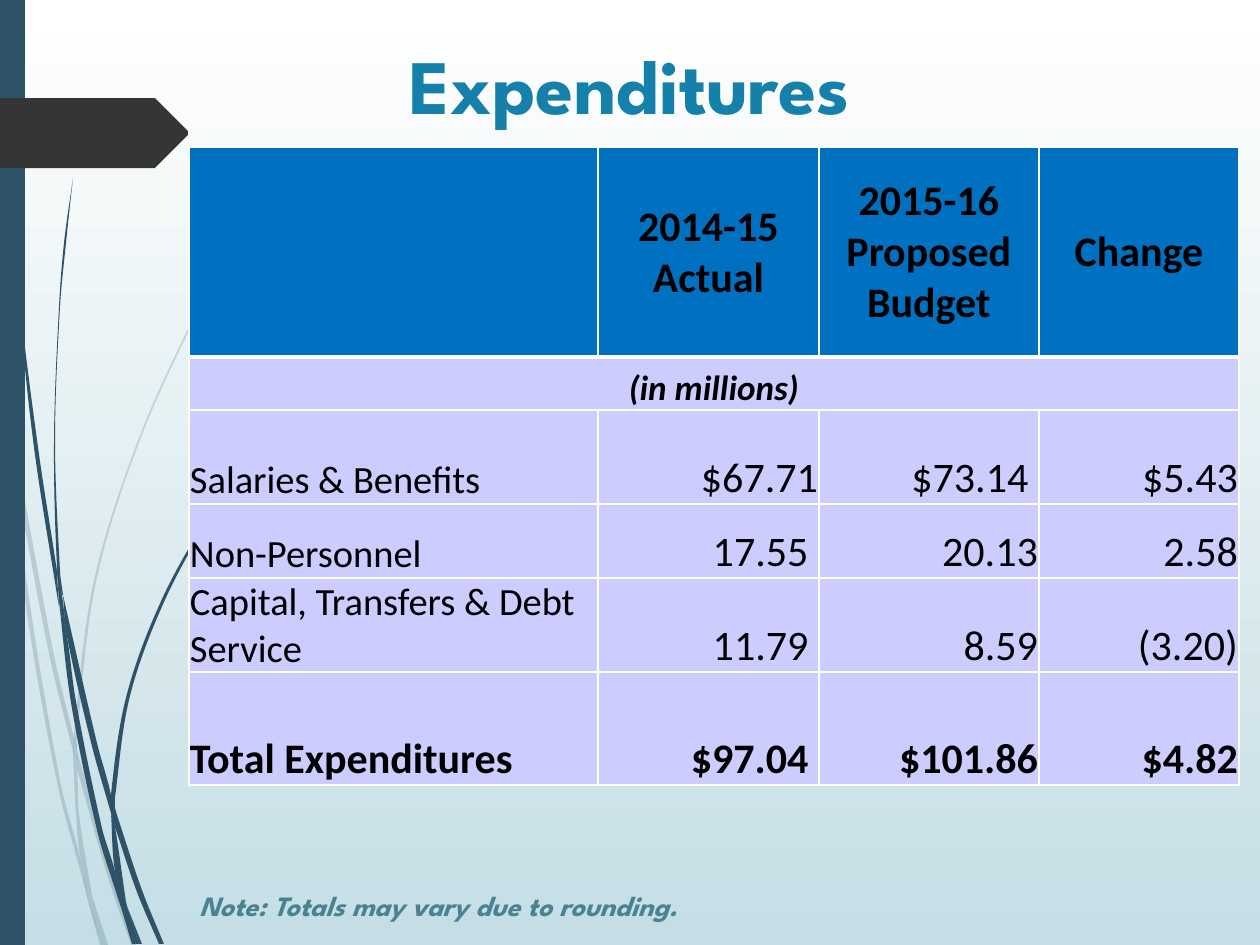
from math import dist

from lxml.etree import SubElement
from pptx import Presentation
from pptx.dml.color import RGBColor
from pptx.enum.shapes import MSO_SHAPE
from pptx.enum.text import MSO_ANCHOR as ANCHOR, PP_ALIGN as ALIGN
from pptx.oxml.ns import qn
from pptx.util import Emu, Pt

PX_PER_INCH = 126
SPARTAN, CALIBRI = "League Spartan", "Calibri"

WHITE = RGBColor(0xFF, 0xFF, 0xFF)
BLACK = RGBColor(0x00, 0x00, 0x00)
MIST = RGBColor(0xC5, 0xDE, 0xE5)
SLATE = RGBColor(0x2E, 0x53, 0x69)
CHARCOAL = RGBColor(0x35, 0x35, 0x35)
TITLE_BLUE = RGBColor(0x15, 0x81, 0xAA)
HEADER_BLUE = RGBColor(0x00, 0x70, 0xC0)
LILAC = RGBColor(0xCC, 0xCC, 0xFF)
NOTE_TEAL = RGBColor(0x49, 0x83, 0x92)

# Grass blades: the two edges of each outline, in px
PALE_BLADES = [
    ([(0, 355), (8, 406), (10, 441)], [(9, 433), (0, 377)]),
    ([(13, 435), (54, 655), (74, 738)], [(74, 755), (50, 658), (15, 474)]),
    ([(77, 751), (81, 765), (111, 872), (136, 945)],
     [(131, 945), (107, 874), (77, 769)]),
    ([(92, 896), (108, 945)], [(105, 945)]),
    ([(10, 441), (15, 474), (28, 591), (60, 780), (81, 861), (88, 900)],
     [(88, 900), (81, 873), (57, 782), (24, 592), (10, 441)]),
    ([(73, 755), (76, 814), (81, 861), (92, 896)],
     [(92, 896), (79, 814), (77, 769), (73, 755)]),
    ([(77, 751), (77, 736), (96, 582), (140, 440), (200, 309), (236, 249),
      (253, 221), (273, 194)],
     [(273, 193), (253, 220), (234, 248), (199, 307), (139, 438), (94, 581),
      (74, 736), (77, 751)]),
    ([(88, 900), (103, 945)], [(100, 945)]),
    ([(74, 738), (77, 751), (77, 769)], [(77, 766), (73, 755)]),
    ([(82, 861), (84, 872), (92, 896), (105, 945)],
     [(103, 945), (88, 900), (82, 861)]),
]
DARK_BLADES = [
    ([(3, 0), (4, 60), (6, 139), (18, 294), (34, 447), (58, 601), (59, 606)],
     [(57, 576), (57, 571), (38, 447), (19, 292), (8, 137), (5, 60), (4, 0)]),
    ([(63, 595), (97, 743), (111, 795), (111, 813)],
     [(111, 813), (92, 746), (67, 636), (63, 595)]),
    ([(115, 808), (118, 818), (142, 890), (164, 944)],
     [(159, 944), (137, 892), (115, 827)]),
    ([(59, 601), (67, 636), (76, 701), (102, 828), (115, 871), (122, 910)],
     [(122, 910), (116, 892), (97, 830), (71, 702), (59, 601)]),
    ([(63, 595), (60, 571), (55, 440), (60, 307), (66, 243), (73, 178)],
     [(73, 178), (64, 243), (59, 307), (54, 440), (57, 566), (62, 595)]),
    ([(127, 906), (142, 944)], [(139, 944)]),
    ([(57, 566), (62, 595), (67, 636)], [(59, 601), (57, 571)]),
    ([(115, 808), (115, 798), (130, 696), (165, 600), (213, 512), (241, 471),
      (256, 452), (272, 433)],
     [(271, 433), (256, 451), (241, 470), (212, 510), (163, 597), (127, 694),
      (111, 795), (115, 808)]),
    ([(122, 910), (136, 944)], [(132, 944)]),
    ([(111, 813), (115, 827), (126, 902), (127, 906)],
     [(127, 906), (115, 871), (111, 813)]),
    ([(111, 795), (115, 808), (115, 827)], [(113, 820), (111, 813)]),
    ([(115, 871), (127, 906), (139, 944)], [(136, 944), (122, 910), (115, 871)]),
]
TAB = [(0, 98), (155, 98), (157, 100), (188, 131), (188, 135), (157, 166),
       (155, 168), (0, 168)]

COLUMNS = [409, 221, 220, 200]
ROWS = [210, 53, 94, 74, 94, 113]
HEADER = ["", "2014-15 Actual", "2015-16 Proposed Budget", "Change"]
UNIT = "(in millions)"
BODY = [
    ["Salaries & Benefits", "$67.71", "$73.14 ", "$5.43"],
    ["Non-Personnel", "17.55 ", "20.13", "2.58"],
    ["Capital, Transfers & Debt Service", "11.79 ", "8.59", "(3.20)"],
    ["Total Expenditures", "$97.04 ", "$101.86", "$4.82"],
]


def px(n):
    return Emu(round(n * 914400 / PX_PER_INCH))


def paint(sp, color):
    sp.shadow.inherit = False
    sp.fill.solid()
    sp.fill.fore_color.rgb = color
    sp.line.fill.background()


def add_outline(shapes, points, color):
    first, *rest = [(px(x), px(y)) for x, y in points]
    builder = shapes.build_freeform(*first, scale=1.0)
    builder.add_line_segments(rest, close=False)
    sp = builder.convert_to_shape()
    SubElement(next(sp._element.iter(qn("a:path"))), qn("a:close"))
    paint(sp, color)
    return sp


def curve_controls(edge):
    """Two Bezier handles for each span of a smooth edge."""
    ends = [edge[0], *edge, edge[-1]]
    for a, b, c, d in zip(ends, ends[1:], ends[2:], ends[3:]):
        span = dist(b, c) / 3
        out, back = span / (dist(a, b) + dist(b, c)), span / (dist(b, c) + dist(c, d))
        yield [(b[0] + (c[0] - a[0]) * out, b[1] + (c[1] - a[1]) * out),
               (c[0] - (d[0] - b[0]) * back, c[1] - (d[1] - b[1]) * back)]


def add_blade(shapes, left, right):
    pointed = left[-1] == right[0]
    points = left + right[pointed:]
    sp = add_outline(shapes, points, SLATE)
    cap = [] if pointed else [None]
    spans = [*curve_controls(left), *cap, *curve_controls(right)]
    x0, y0 = (min(axis) for axis in zip(*points))
    for line, controls in zip(list(sp._element.iter(qn("a:lnTo"))), spans):
        if controls:
            line.tag = qn("a:cubicBezTo")
            for i, (x, y) in enumerate(controls):
                pt = SubElement(line, qn("a:pt"), x=str(px(x - x0)), y=str(px(y - y0)))
                line.insert(i, pt)
    return sp


def add_blades(slide, blades, opacity=None):
    group = slide.shapes.add_group_shape()
    for left, right in blades:
        sp = add_blade(group.shapes, left, right)
        if opacity:
            clr = sp.fill._xPr.find(qn("a:solidFill"))[0]
            SubElement(clr, qn("a:alpha"), val=str(opacity * 1000))


def add_run(p, text, font, size, color, bold=False, italic=False):
    r = p.add_run()
    r.text = text
    f = r.font
    f.name, f.size, f.bold, f.italic = font, Pt(size), bold, italic
    f.color.rgb = color


def add_text(slide, box, text, align, *style, wrap=True, **emphasis):
    tf = slide.shapes.add_textbox(*map(px, box)).text_frame
    tf.word_wrap = wrap
    p = tf.paragraphs[0]
    p.alignment = align
    add_run(p, text, *style, **emphasis)


def set_borders(cell, **widths):
    tc_pr = cell._tc.get_or_add_tcPr()
    for i, side in enumerate("LRTB"):
        ln = SubElement(tc_pr, qn(f"a:ln{side}"), w=str(Pt(widths.get(side, 1))))
        fill = SubElement(ln, qn("a:solidFill"))
        SubElement(fill, qn("a:srgbClr"), val=str(WHITE))
        tc_pr.insert(i, ln)


def fill_cell(cell, text, fill, align, size, anchor=ANCHOR.BOTTOM, **emphasis):
    cell.fill.solid()
    cell.fill.fore_color.rgb = fill
    cell.vertical_anchor = anchor
    cell.margin_left = cell.margin_right = cell.margin_top = px(1)
    cell.margin_bottom = 0
    p = cell.text_frame.paragraphs[0]
    p.alignment = align
    if text:
        add_run(p, text, CALIBRI, size, BLACK, **emphasis)


def add_budget_table(slide):
    table = slide.shapes.add_table(len(ROWS), len(COLUMNS), px(189), px(147),
                                   px(sum(COLUMNS)), px(sum(ROWS))).table
    table.first_row = table.horz_banding = False
    for column, width in zip(table.columns, COLUMNS):
        column.width = px(width)
    for row, height in zip(table.rows, ROWS):
        row.height = px(height)

    # Header and unit rows
    for c, text in enumerate(HEADER):
        fill_cell(table.cell(0, c), text, HEADER_BLUE, ALIGN.CENTER, 24,
                  ANCHOR.MIDDLE, bold=True)
        set_borders(table.cell(0, c), B=3)
        set_borders(table.cell(1, c), T=3)
    table.cell(1, 0).merge(table.cell(1, len(COLUMNS) - 1))
    fill_cell(table.cell(1, 0), UNIT, LILAC, ALIGN.CENTER, 20, bold=True, italic=True)

    # Amounts, with a bold total
    for r, texts in enumerate(BODY, 2):
        total = r == len(ROWS) - 1
        for c, text in enumerate(texts):
            label = c == 0
            fill_cell(table.cell(r, c), text, LILAC,
                      ALIGN.LEFT if label else ALIGN.RIGHT,
                      22 if label and not total else 24, bold=total)
            set_borders(table.cell(r, c))


def main():
    prs = Presentation()
    prs.slide_width, prs.slide_height = px(1260), px(945)
    slide = prs.slides.add_slide(prs.slide_layouts[6])

    # Background
    fill = slide.background.fill
    fill.gradient()
    fill.gradient_angle = 270
    for stop, color in zip(fill.gradient_stops, (WHITE, MIST)):
        stop.color.rgb = color

    # Side decoration
    add_blades(slide, PALE_BLADES, opacity=20)
    add_blades(slide, DARK_BLADES)
    bar = slide.shapes.add_shape(MSO_SHAPE.RECTANGLE, 0, 0, px(25), px(945))
    paint(bar, SLATE)
    add_outline(slide.shapes, TAB, CHARCOAL)

    # Content
    add_text(slide, (0, 31, 1260, 78), "Expenditures", ALIGN.CENTER,
             SPARTAN, 44, TITLE_BLUE, bold=True)
    add_budget_table(slide)
    add_text(slide, (187, 882, 564, 47), "Note: Totals may vary due to rounding.",
             ALIGN.LEFT, SPARTAN, 16, NOTE_TEAL, wrap=False, bold=True, italic=True)

    prs.save("out.pptx")


if __name__ == "__main__":
    main()
